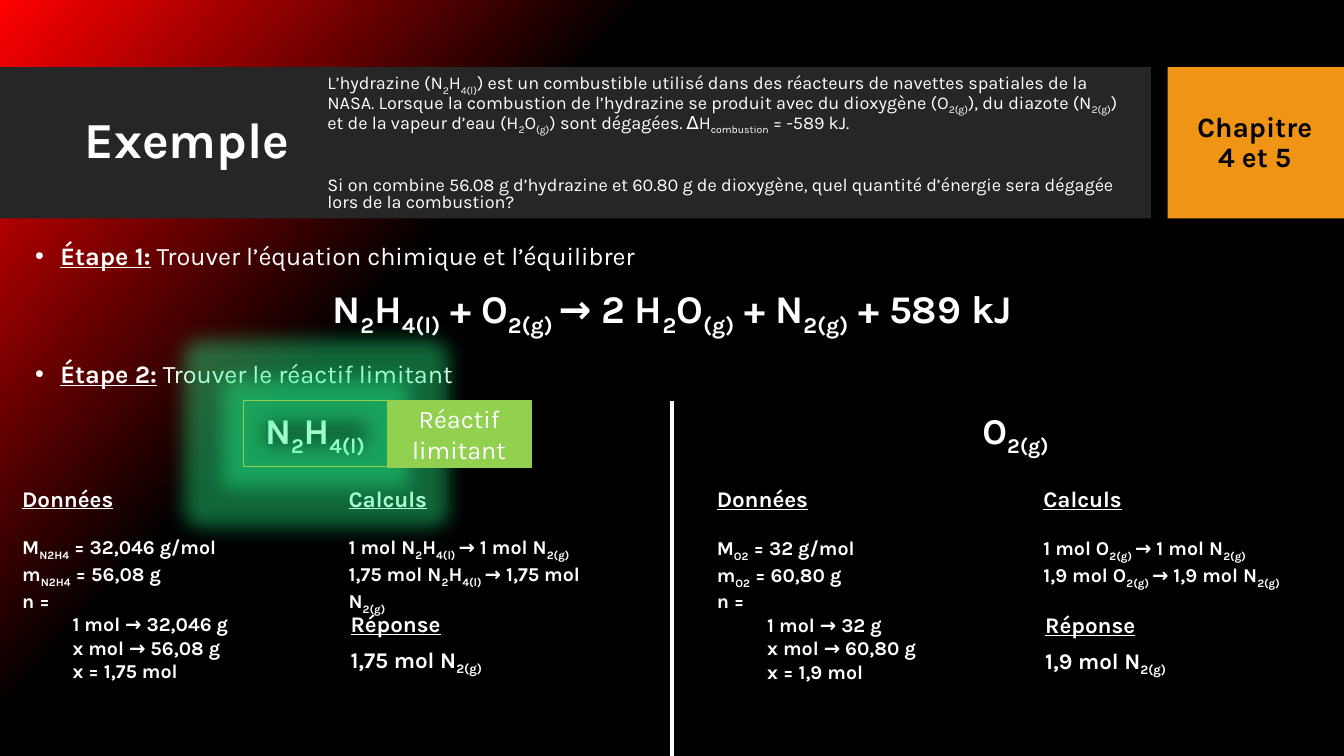
from dataclasses import dataclass

from lxml.etree import SubElement
from pptx import Presentation
from pptx.dml.color import RGBColor
from pptx.enum.shapes import MSO_CONNECTOR, MSO_SHAPE
from pptx.enum.text import MSO_ANCHOR, PP_ALIGN
from pptx.oxml.ns import qn
from pptx.util import Emu, Inches, Pt

COLORS = {"red": "FF0000", "black": "000000", "band": "262626", "orange": "F09415",
          "white": "FFFFFF", "green": "92D050", "glow": "28FF90"}
COLS, ROWS = 160, 90
TOP, MID = MSO_ANCHOR.TOP, MSO_ANCHOR.MIDDLE
CENTER = PP_ALIGN.CENTER

prs = Presentation()
prs.slide_width, prs.slide_height = Inches(13.33), Inches(7.5)
s = prs.slides.add_slide(prs.slide_layouts[5])


@dataclass
class Box:
    col: float
    row: float
    cols: float
    rows: float

    def emu(self) -> list[Emu]:
        cw, rh = prs.slide_width / COLS, prs.slide_height / ROWS
        return [Emu(round(v)) for v in (self.col * cw, self.row * rh, self.cols * cw, self.rows * rh)]


@dataclass
class Para:
    text: str
    lead: str = ""
    indent: float = 0
    bullet: bool = False
    gap: float = 0


@dataclass
class Style:
    size: float
    bold: bool = True
    underline: bool = False
    color: str = "white"
    align: PP_ALIGN = PP_ALIGN.LEFT
    anchor: MSO_ANCHOR = TOP
    spacing: float = 1.0


@dataclass
class Reactant:
    col: float
    row: float
    formula_col: float
    formula: str
    data: list[Para]
    steps: list[Para]
    answer: str


def rgb(name: str) -> RGBColor:
    return RGBColor.from_string(COLORS[name])


def add_run(p, text: str, style: Style, **changes) -> None:
    for i, part in enumerate(text.split("~")):
        if not part:
            continue
        r = p.add_run()
        r.text = part
        fmt = {"name": "Karla", "size": Pt(style.size), "bold": style.bold,
               "underline": style.underline} | changes
        for key, value in fmt.items():
            setattr(r.font, key, value)
        r.font.color.rgb = rgb(style.color)
        if i % 2:
            r._r.get_or_add_rPr().set("baseline", "-25000")


def write(sp, paras: list[Para], style: Style) -> None:
    tf = sp.text_frame
    tf.word_wrap, tf.vertical_anchor = True, style.anchor
    for i, para in enumerate(paras):
        p = tf.paragraphs[0] if i == 0 else tf.add_paragraph()
        p.alignment, p.line_spacing = style.align, style.spacing
        p.space_before = Pt(para.gap)
        pPr = p._p.get_or_add_pPr()
        pPr.set("marL", str(Inches(para.indent)))
        pPr.set("indent", str(-Inches(para.indent) if para.bullet else 0))
        if para.bullet:
            SubElement(pPr, qn("a:buFont"), typeface="Arial")
            SubElement(pPr, qn("a:buChar"), char="•")
        if para.lead:
            add_run(p, para.lead, style, bold=True, underline=True)
        add_run(p, para.text, style)


def add_text(box: Box, paras: list[Para], style: Style) -> None:
    write(s.shapes.add_textbox(*box.emu()), paras, style)


def add_rect(box: Box, fill: str = "", line: str = ""):
    sp = s.shapes.add_shape(MSO_SHAPE.RECTANGLE, *box.emu())
    sp.shadow.inherit = False
    if fill:
        sp.fill.solid()
        sp.fill.fore_color.rgb = rgb(fill)
    else:
        sp.fill.background()
    if line:
        sp.line.color.rgb, sp.line.width = rgb(line), Pt(1)
    else:
        sp.line.fill.background()
    return sp


def add_glow(sp, color: str, radius: float, alpha: int) -> None:
    effects = sp._element.spPr.find(qn("a:effectLst"))
    glow = SubElement(effects, qn("a:glow"), rad=str(Inches(radius)))
    clr = SubElement(glow, qn("a:srgbClr"), val=COLORS[color])
    SubElement(clr, qn("a:alpha"), val=str(alpha * 1000))


def add_divider(col: float, row: float) -> None:
    x, y, w, h = Box(col, row, 0, ROWS - row).emu()
    ln = s.shapes.add_connector(MSO_CONNECTOR.STRAIGHT, x, y, x + w, y + h)
    ln.line.color.rgb, ln.line.width = rgb("white"), Pt(3)
    SubElement(ln._element.spPr, qn("a:effectLst"))


def add_background() -> None:
    fill = s.background.fill
    fill.gradient()
    fill.gradient_angle = 360 - 42
    for stop, (color, position) in zip(fill.gradient_stops, [("red", 0), ("black", 0.32)]):
        stop.color.rgb, stop.position = rgb(color), position


def add_header() -> None:
    title = s.shapes.title
    for box, color in [(Box(0, 8, 137, 18), "band"), (Box(139, 8, 21, 18), "orange")]:
        title._element.addprevious(add_rect(box, color)._element)
    title.left, title.top, title.width, title.height = Box(8.9, 9.85, 126.1, 14.15).emu()
    write(title, [Para("Exemple")], Style(36, anchor=MID, spacing=0.9))
    add_text(Box(37.8, 8, 97.3, 18.1), [
        Para("L’hydrazine (N~2~H~4(l)~) est un combustible utilisé dans des réacteurs de navettes "
             "spatiales de la NASA. Lorsque la combustion de l’hydrazine se produit avec du "
             "dioxygène (O~2(g)~), du diazote (N~2(g)~) et de la vapeur d’eau (H~2~O~(g)~) sont "
             "dégagées. ∆H~combustion~ = -589 kJ."),
        Para("Si on combine 56.08 g d’hydrazine et 60.80 g de dioxygène, quel quantité d’énergie "
             "sera dégagée lors de la combustion?", gap=32),
    ], Style(12.9, bold=False, anchor=MID, spacing=0.8))
    add_text(Box(138.75, 8, 21.25, 18.1), [Para("Chapitre"), Para("4 et 5")],
             Style(20, color="black", align=CENTER, anchor=MID, spacing=0.9))


def add_steps() -> None:
    for row, lead, text in [(27.1, "Étape 1:", " Trouver l’équation chimique et l’équilibrer"),
                            (41.2, "Étape 2:", " Trouver le réactif limitant")]:
        add_text(Box(3, row, 154, 6.6), [Para(text, lead, indent=0.25, bullet=True)],
                 Style(18, bold=False, anchor=MID))
    add_text(Box(3, 33.5, 154, 6.6),
             [Para("N~2~H~4(l)~ + O~2(g) ~→ 2 H~2~O~(g)~ + N~2(g)~ + 589 kJ")],
             Style(28, align=CENTER, anchor=MID, spacing=0.9))


def add_reactant(re: Reactant) -> None:
    head = Style(16, underline=True)
    mid_head = Style(16, underline=True, anchor=MID)
    calc_col, answer_col = re.col + 38.87, re.col + 39.1
    add_text(Box(re.formula_col, 48.7, 69, 5.5), [Para(re.formula)],
             Style(25.9, align=CENTER, anchor=MID, spacing=0.8))
    add_text(Box(re.col, re.row, 29.4, 4.4), [Para("Données")], mid_head)
    add_text(Box(re.col, re.row + 6, 29.5, 18.1), re.data, Style(14))
    add_text(Box(calc_col, re.row, 34.2, 4.4), [Para("Calculs")], mid_head)
    add_text(Box(calc_col, re.row + 6, 34.2, 9), re.steps, Style(14))
    add_text(Box(answer_col, re.row + 15, 34.2, 4.4), [Para("Réponse")], head)
    add_text(Box(answer_col, re.row + 19.2, 34.2, 4.4), [Para(re.answer)], Style(16))


def given(symbol: str, molar: str, mass: str, moles: str) -> list[Para]:
    lines = [Para(f"M~{symbol}~ = {molar} g/mol"), Para(f"m~{symbol}~ = {mass} g"), Para("n =")]
    work = [f"1 mol → {molar} g", f"x mol → {mass} g", f"x = {moles} mol"]
    return lines + [Para(t, indent=0.5) for t in work]


def ratio(formula: str, moles: str) -> list[Para]:
    return [Para(f"{n} mol {formula[:-1]} ~→ {n} mol N~2(g)~") for n in ("1", moles)]


def reactant(col: float, row: float, formula_col: float, formula: str, symbol: str,
             molar: str, mass: str, moles: str) -> Reactant:
    return Reactant(col, row, formula_col, formula, given(symbol, molar, mass, moles),
                    ratio(formula, moles), f"{moles} mol N~2(g)~")


def add_limiting_mark() -> None:
    add_glow(add_rect(Box(29, 47.65, 17.1, 7.9), line="green"), "glow", 0.4, 40)
    label = add_rect(Box(46.1, 47.65, 17.1, 8), "green", "green")
    write(label, [Para("Réactif limitant")], Style(18, bold=False, align=CENTER, anchor=MID))


def main() -> None:
    add_background()
    add_header()
    add_steps()
    add_divider(80, 47.8)
    add_reactant(reactant(1.45, 57.1, 3, "N~2~H~4(l)~", "N2H4", "32,046", "56,08", "1,75"))
    add_reactant(reactant(84.15, 57.2, 86.4, "O~2(g)~", "O2", "32", "60,80", "1,9"))
    add_limiting_mark()
    prs.save("out.pptx")


if __name__ == "__main__":
    main()
